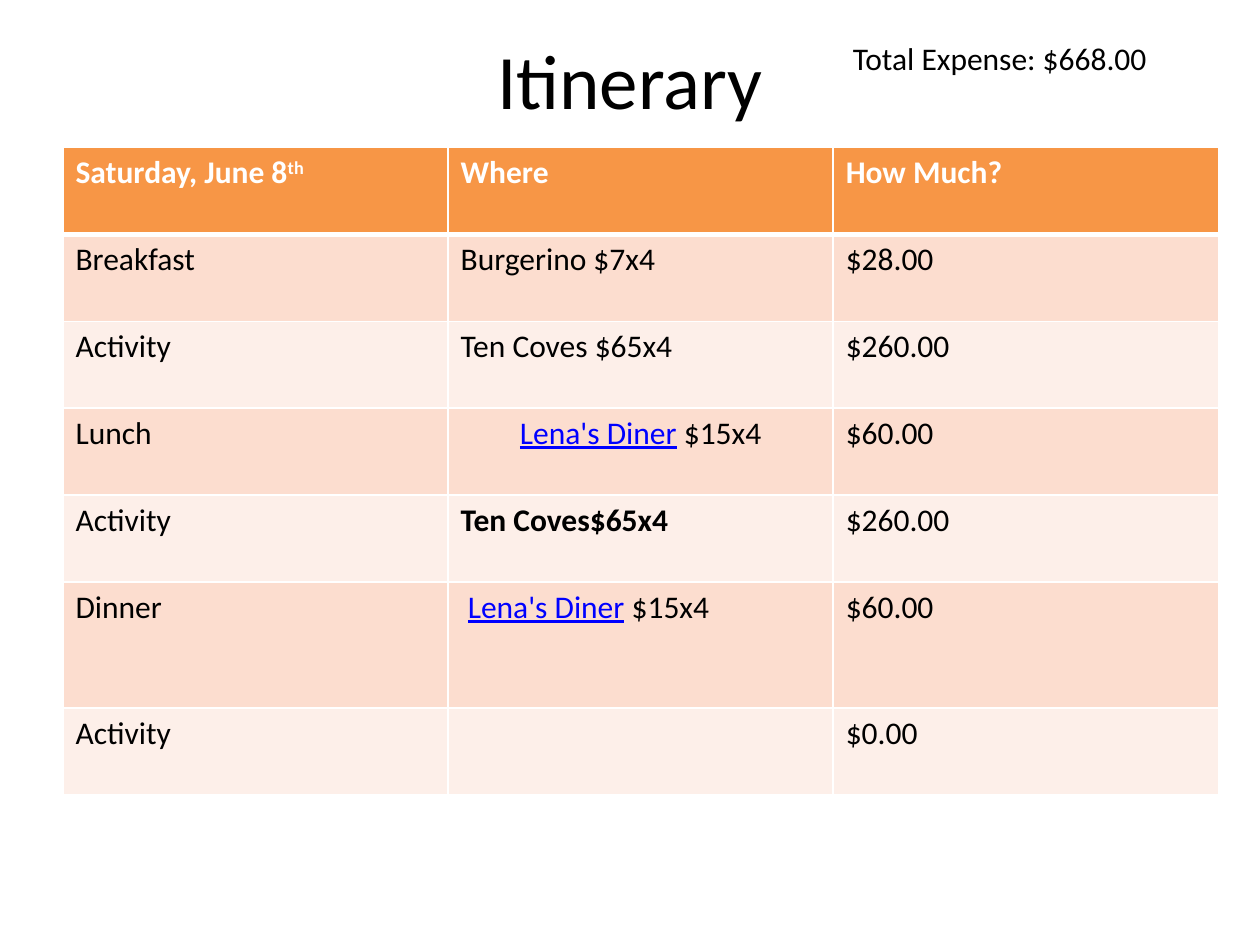
from dataclasses import dataclass
from pptx import Presentation
from pptx.dml.color import RGBColor
from pptx.enum.text import MSO_ANCHOR, PP_ALIGN
from pptx.oxml import parse_xml
from pptx.oxml.ns import nsdecls
from pptx.util import Inches, Pt

WIDE, HIGH = 10, 7.5
FONT = "Calibri"
BLACK = RGBColor(0, 0, 0)
WHITE = RGBColor(255, 255, 255)
BLUE = RGBColor(0, 0, 255)
ORANGE = RGBColor(0xF7, 0x96, 0x46)
PEACH = RGBColor(0xFC, 0xDD, 0xCF)
CREAM = RGBColor(0xFD, 0xEF, 0xE9)


@dataclass
class Span:
    text: str
    color: RGBColor = BLACK
    bold: bool = False
    line: bool = False
    lift: int = 0


@dataclass
class Entry:
    spans: list[Span]
    align: PP_ALIGN = PP_ALIGN.LEFT


def head(*texts: str) -> Entry:
    return Entry([Span(text, WHITE, True, lift=30000 * i) for i, text in enumerate(texts)])


def plain(text: str, bold: bool = False) -> Entry:
    return Entry([Span(text, bold=bold)] if text else [])


def diner(lead: str = "", align: PP_ALIGN = PP_ALIGN.LEFT) -> Entry:
    spans = [Span(lead), Span("Lena's Diner", BLUE, line=True), Span(" $15x4")]
    return Entry([span for span in spans if span.text], align)


ROWS = [
    [head("Saturday, June 8", "th"), head("Where"), head("How Much?")],
    [plain("Breakfast"), plain("Burgerino $7x4"), plain("$28.00")],
    [plain("Activity"), plain("Ten Coves $65x4"), plain("$260.00")],
    [plain("Lunch"), diner(align=PP_ALIGN.CENTER), plain("$60.00")],
    [plain("Activity"), plain("Ten Coves$65x4", bold=True), plain("$260.00")],
    [plain("Dinner"), diner(" "), plain("$60.00")],
    [plain("Activity"), plain(""), plain("$0.00")],
]
DINNER = 5


def place(left: float, top: float, width: float, height: float) -> list[int]:
    return [Inches(left * WIDE), Inches(top * HIGH), Inches(width * WIDE), Inches(height * HIGH)]


def write(frame, spans: list[Span], size: float = 18, align: PP_ALIGN = PP_ALIGN.LEFT) -> None:
    para = frame.paragraphs[0]
    para.alignment = align
    para.font.size = Pt(size)
    for span in spans:
        run = para.add_run()
        run.text = span.text
        font = run.font
        font.name, font.size, font.bold = FONT, Pt(size), span.bold
        font.underline = span.line
        font.color.rgb = span.color
        if span.lift:
            run._r.get_or_add_rPr().set("baseline", str(span.lift))


def edge(cell, row: int) -> None:
    props = cell._tc.get_or_add_tcPr()
    for side in "LRTB":
        thick = 3 if (row, side) in ((0, "B"), (1, "T")) else 1
        props.append(parse_xml(
            f'<a:ln{side} {nsdecls("a")} w="{Pt(thick)}"><a:solidFill>'
            f'<a:srgbClr val="{WHITE}"/></a:solidFill></a:ln{side}>'))


def tint(row: int) -> RGBColor:
    if row == 0:
        return ORANGE
    return PEACH if row % 2 else CREAM


def grid(slide) -> None:
    box = place(0.05, 0.156, 0.917, 0.685)
    table = slide.shapes.add_table(len(ROWS), len(ROWS[0]), *box).table
    for col in table.columns:
        col.width = box[2] // len(ROWS[0])
    for r, row in enumerate(ROWS):
        table.rows[r].height = Inches(1 if r == DINNER else 0.69)
        for c, entry in enumerate(row):
            cell = table.cell(r, c)
            edge(cell, r)
            cell.fill.solid()
            cell.fill.fore_color.rgb = tint(r)
            write(cell.text_frame, entry.spans, align=entry.align)


def main() -> None:
    deck = Presentation()
    deck.slide_width, deck.slide_height = Inches(WIDE), Inches(HIGH)
    slide = deck.slides.add_slide(deck.slide_layouts[5])
    title = slide.shapes.title
    title.left, title.top, title.width, title.height = place(0.05, 0, 0.9, 1 / 6)
    title.text_frame.vertical_anchor = MSO_ANCHOR.MIDDLE
    write(title.text_frame, [Span("Itinerary")], size=44, align=PP_ALIGN.CENTER)
    total = slide.shapes.add_textbox(*place(0.667, 0.035, 0.308, 0.054)).text_frame
    total.word_wrap = True
    write(total, [Span("Total Expense: $668.00")])
    grid(slide)
    deck.save("out.pptx")


if __name__ == "__main__":
    main()
